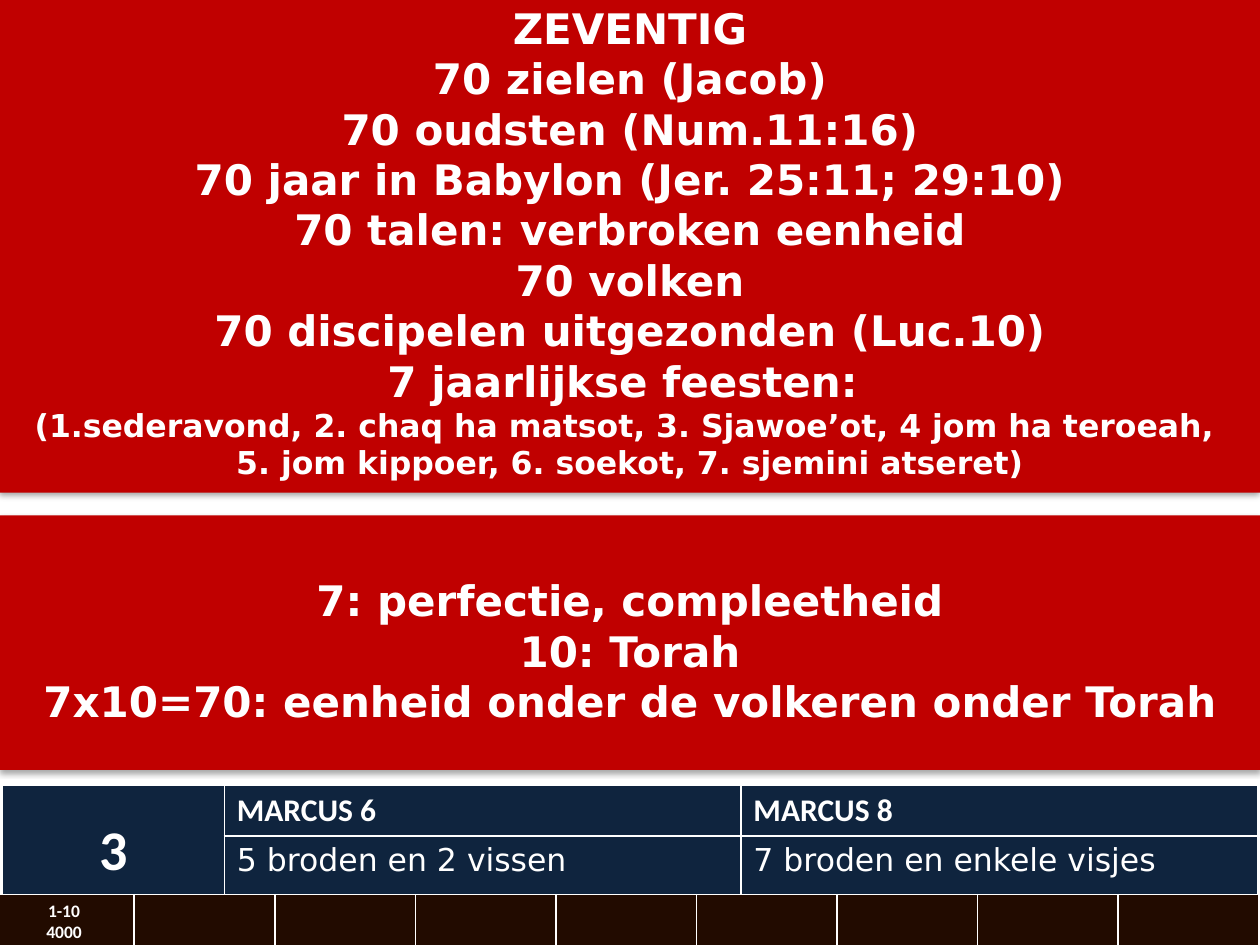
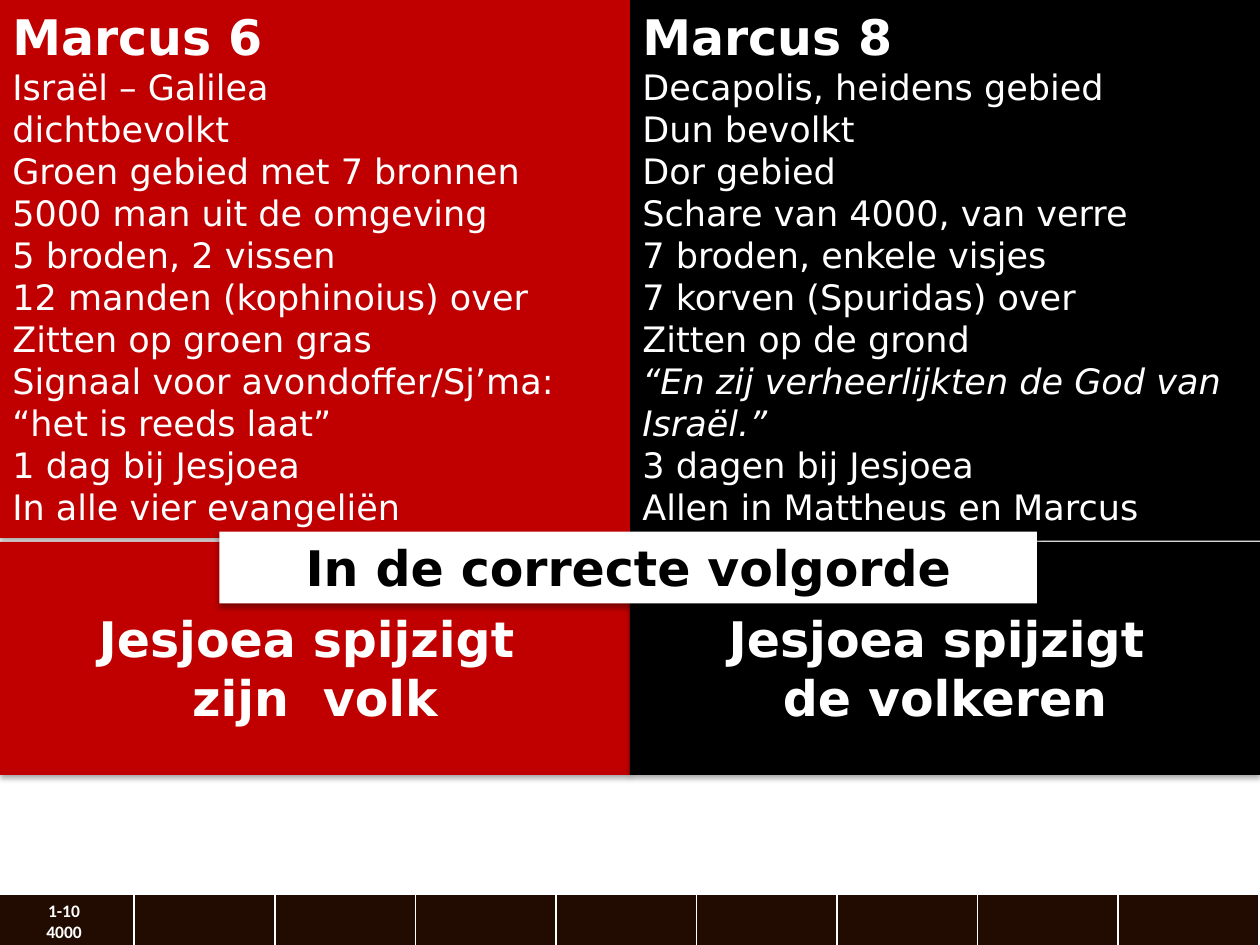
import pptx
import pptx.util
import pptx.dml.color
import pptx.enum.shapes
import pptx.enum.text
import pptx.oxml
import pptx.oxml.ns

RED = pptx.dml.color.RGBColor(0xC0, 0x00, 0x00)
BLACK = pptx.dml.color.RGBColor(0x00, 0x00, 0x00)
WHITE = pptx.dml.color.RGBColor(0xFF, 0xFF, 0xFF)
NAVY = pptx.dml.color.RGBColor(0x0F, 0x24, 0x3E)
BROWN = pptx.dml.color.RGBColor(0x22, 0x0B, 0x00)
SANS = "DejaVu Sans"
PLAIN = "Calibri"
CENTER = pptx.enum.text.PP_ALIGN.CENTER
LEFT = pptx.enum.text.PP_ALIGN.LEFT
MIDDLE = pptx.enum.text.MSO_ANCHOR.MIDDLE
TOP = pptx.enum.text.MSO_ANCHOR.TOP

COLS, ROWS = 100, 75
UNIT = pptx.util.Inches(0.1)
FOOT = (-0.5, 71, 100.4, 4.3)
SHADOW = (
    '<a:outerShdw %s blurRad="40000" dist="23000" dir="5400000" rotWithShape="0">'
    '<a:srgbClr val="000000"><a:alpha val="35000"/></a:srgbClr></a:outerShdw>'
    % pptx.oxml.ns.nsdecls("a")
)

SEVENTY = [
    "ZEVENTIG",
    "70 zielen (Jacob)",
    "70 oudsten (Num.11:16)",
    "70 jaar in Babylon (Jer. 25:11; 29:10)",
    "70 talen: verbroken eenheid",
    "70 volken",
    "70 discipelen uitgezonden (Luc.10)",
    "7 jaarlijkse feesten: ",
]
FEASTS = [
    "(1.sederavond, 2. chaq ha matsot, 3. Sjawoe’ot, 4 jom ha teroeah, ",
    "5. jom kippoer, 6. soekot, 7. sjemini atseret)",
]
TORAH = [
    "7: perfectie, compleetheid",
    "10: Torah",
    "7x10=70: eenheid onder de volkeren onder Torah",
]
MARK_SIX = [
    "Israël – Galilea",
    "dichtbevolkt",
    "Groen gebied met 7 bronnen",
    "5000 man uit de omgeving",
    "5 broden, 2 vissen",
    "12 manden (kophinoius) over",
    "Zitten op groen gras",
    "Signaal voor avondoffer/Sj’ma: “het is reeds laat”",
    "1 dag bij Jesjoea",
    "In alle vier evangeliën",
]
MARK_EIGHT = [
    "Decapolis, heidens gebied",
    "Dun bevolkt",
    "Dor gebied",
    "Schare van 4000, van verre",
    "7 broden, enkele visjes",
    "7 korven (Spuridas) over",
    "Zitten op de grond",
    "“En zij verheerlijkten de God van Israël.”",
    "3 dagen bij Jesjoea",
    "Allen in Mattheus en Marcus",
]


def scale(*cells):
    """Turn grid cells into slide lengths."""
    return [round(cell * UNIT) for cell in cells]


def write(frame, lines, size, color=WHITE, face=SANS, bold=True, align=LEFT):
    """Add lines in one style, starting in the first paragraph if it is free."""
    for line in lines:
        para = frame.paragraphs[0] if not frame.text else frame.add_paragraph()
        para.text = line
        para.alignment = align
        font = para.font
        font.name, font.size, font.bold = face, pptx.util.Pt(size), bold
        font.color.rgb = color


def panel(slide, box, fill, drop=0.5, shade=True):
    """Draw a filled box and return its text frame, with text starting at drop."""
    shape = slide.shapes.add_shape(pptx.enum.shapes.MSO_SHAPE.RECTANGLE, *scale(*box))
    shape.shadow.inherit = False
    shape.fill.solid()
    shape.fill.fore_color.rgb = fill
    shape.line.fill.background()
    if shade:
        effects = shape._element.spPr.find(pptx.oxml.ns.qn("a:effectLst"))
        effects.append(pptx.oxml.parse_xml(SHADOW))
    frame = shape.text_frame
    frame.word_wrap = True
    frame.vertical_anchor = TOP
    frame.margin_top = scale(drop)[0]
    return frame


def grid(slide, box, rows, widths, fill):
    """Add a table of filled cells, with widths as shares of the box."""
    frame = slide.shapes.add_table(rows, len(widths), *scale(*box))
    table = frame.table
    for col, width in zip(table.columns, widths):
        col.width = scale(box[2] * width / sum(widths))[0]
    for cell in table.iter_cells():
        cell.fill.solid()
        cell.fill.fore_color.rgb = fill
    return table


def footer(slide, box):
    """Draw the progress strip at the foot."""
    table = grid(slide, box, 1, [1] * 9, BROWN)
    write(table.cell(0, 0).text_frame, ["1-10", "4000"], 10, face=PLAIN, align=CENTER)


def bread(slide, box):
    """Draw the table that compares the loaves and fishes."""
    table = grid(slide, box, 2, [1.76, 4.1, 4.1], NAVY)
    step = table.cell(0, 0)
    step.merge(table.cell(1, 0))
    step.vertical_anchor = MIDDLE
    write(step.text_frame, ["3"], 32, face=PLAIN, align=CENTER)
    pairs = [("MARCUS 6", "5 broden en 2 vissen"), ("MARCUS 8", "7 broden en enkele visjes")]
    for col, (head, body) in enumerate(pairs, 1):
        write(table.cell(0, col).text_frame, [head], 18, face=PLAIN)
        write(table.cell(1, col).text_frame, [body], 18, bold=False)


def numbers(slide, box):
    """Build the slide on seventy and its factors."""
    left, top, width, height = box
    bread(slide, (left + 0.2, top + 62.3, width - 0.4, 8.1))
    footer(slide, FOOT)
    upper = panel(slide, (left, top - 0.3, width, 39.4), RED)
    write(upper, SEVENTY, 24, align=CENTER)
    write(upper, FEASTS, 18, align=CENTER)
    lower = panel(slide, (left, top + 40.9, width, 20.2), RED, drop=4.7)
    write(lower, TORAH, 24, align=CENTER)


def column(slide, box, fill, head, lines, shade):
    """Draw one chapter's list and return its text frame."""
    frame = panel(slide, box, fill, shade=shade)
    write(frame, [head], 28)
    write(frame, lines, 20, bold=False)
    return frame


def chapters(slide, box):
    """Build the slide that sets two chapters side by side."""
    left, top, width, height = box
    half = width / 2
    right = column(slide, (left + half, top, half, 42.9), BLACK, "Marcus 8", MARK_EIGHT, False)
    right.paragraphs[8].font.italic = True
    column(slide, (left, top, half, 42.7), RED, "Marcus 6", MARK_SIX, True)
    footer(slide, FOOT)
    for side, (fill, folk) in enumerate([(RED, "zijn  volk"), (BLACK, "de volkeren")]):
        frame = panel(slide, (left + side * half, top + 43, half, 18.5), fill, drop=5.3)
        write(frame, ["Jesjoea spijzigt ", folk], 28, align=CENTER)
    label = panel(slide, (left + 17.4, top + 42.2, 64.9, 5.7), WHITE)
    write(label, ["In de correcte volgorde"], 28, color=BLACK, align=CENTER)


def main():
    """Build and save the deck."""
    deck = pptx.Presentation()
    deck.slide_width, deck.slide_height = scale(COLS, ROWS)
    for build in (numbers, chapters):
        build(deck.slides.add_slide(deck.slide_layouts[6]), (0, 0, COLS, ROWS))
    deck.save("out.pptx")


if __name__ == "__main__":
    main()
